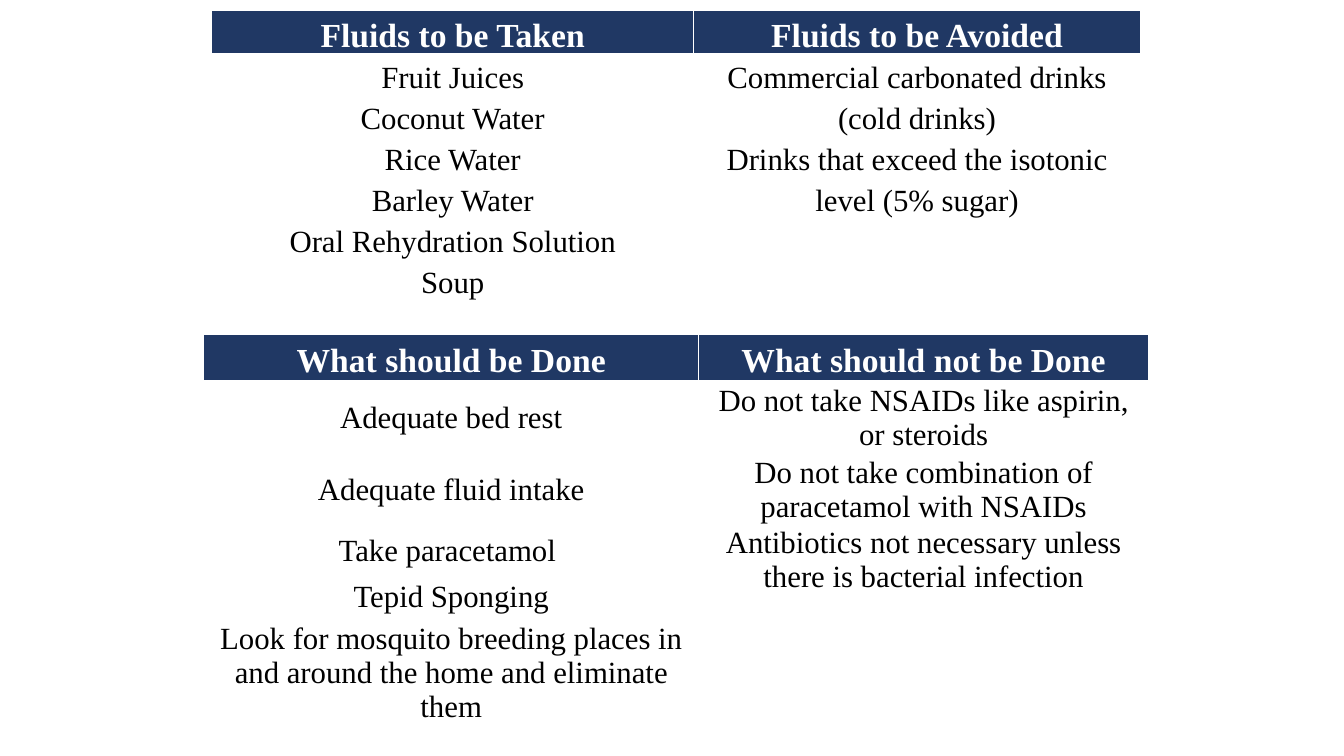
from lxml.etree import SubElement
from pptx import Presentation
from pptx.dml.color import RGBColor
from pptx.enum.text import MSO_ANCHOR, PP_ALIGN
from pptx.oxml.ns import qn
from pptx.util import Emu, Pt

SCALE = 9144
NAVY, WHITE, BLACK = "203864", "FFFFFF", "000000"
HEAD = {"size": Pt(24), "bold": True, "name": "Times New Roman"}
BODY = {"size": Pt(22), "bold": False, "name": "Times New Roman"}
WIDE = {"alignment": PP_ALIGN.CENTER, "line_spacing": 1.2}
LOOSE = {"alignment": PP_ALIGN.CENTER, "space_after": Pt(8)}
TOP, MID = MSO_ANCHOR.TOP, MSO_ANCHOR.MIDDLE

FLUIDS = [
    [["Fluids to be Taken"], ["Fluids to be Avoided"]],
    [
        ["Fruit Juices", "Coconut Water", "Rice Water", "Barley Water",
         "Oral Rehydration Solution", "Soup"],
        ["Commercial carbonated drinks (cold drinks)",
         "Drinks that exceed the isotonic level (5% sugar)"],
    ],
]
ADVICE = [
    [["What should be Done"], ["What should not be Done"]],
    [["Adequate bed rest"], ["Do not take NSAIDs like aspirin, or steroids"]],
    [["Adequate fluid intake"],
     ["Do not take combination of paracetamol with NSAIDs"]],
    [["Take paracetamol ", "Tepid Sponging"],
     ["Antibiotics not necessary unless there is bacterial infection"]],
    [["Look for mosquito breeding places in and around the home and eliminate them"],
     []],
]


def px(n):
    return Emu(n * SCALE)


def paint(fill, color):
    fill.solid()
    fill.fore_color.rgb = RGBColor.from_string(color)


def apply(item, values):
    for name, value in values.items():
        setattr(item, name, value)


def border(cell, sides):
    props = cell._tc.get_or_add_tcPr()
    for side, width in sides.items():
        line = SubElement(props, qn("a:ln" + side), w=str(Pt(width)))
        solid = SubElement(line, qn("a:solidFill"))
        SubElement(solid, qn("a:srgbClr"), val=WHITE)


def write(cell, lines, para, font, color):
    for i, text in enumerate(lines):
        frame = cell.text_frame
        p = frame.add_paragraph() if i else frame.paragraphs[0]
        apply(p, para)
        run = p.add_run()
        run.text = text
        apply(run.font, font)
        paint(run.font.fill, color)


def add_grid(slide, left, top, cols, rows, data, pad, paras, rule, anchor):
    table = slide.shapes.add_table(
        len(rows), len(cols), px(left), px(top), px(sum(cols)), px(sum(rows))
    ).table
    apply(table, {"first_row": False, "horz_banding": False})
    for col, width in zip(table.columns, cols):
        col.width = px(width)
    for r, (row, height) in enumerate(zip(table.rows, rows)):
        row.height = px(height)
        for cell, lines in zip(row.cells, data[r]):
            apply(cell, {"margin_left": px(pad), "margin_right": px(pad),
                         "margin_top": 0, "margin_bottom": 0,
                         "vertical_anchor": anchor(r, lines)})
            border(cell, {"L": 1, "R": 1, "T": 1, "B": 1 if r else rule})
            if r:
                cell.fill.background()
                write(cell, lines, paras[1], BODY, BLACK)
            else:
                paint(cell.fill, NAVY)
                write(cell, lines, paras[0], HEAD, WHITE)


def main():
    deck = Presentation()
    apply(deck, {"slide_width": px(1333), "slide_height": px(750)})
    slide = deck.slides.add_slide(deck.slide_layouts[6])
    add_grid(slide, 210, 10, [478, 443], [44, 264], FLUIDS, 7,
             [WIDE, WIDE], 3, lambda r, lines: TOP)
    add_grid(slide, 202, 332, [491, 446], [46, 73, 71, 95, 93], ADVICE, 6,
             [WIDE | LOOSE, LOOSE], 1,
             lambda r, lines: TOP if r == 0 or lines == ADVICE[3][1] else MID)
    deck.save("out.pptx")


if __name__ == "__main__":
    main()
